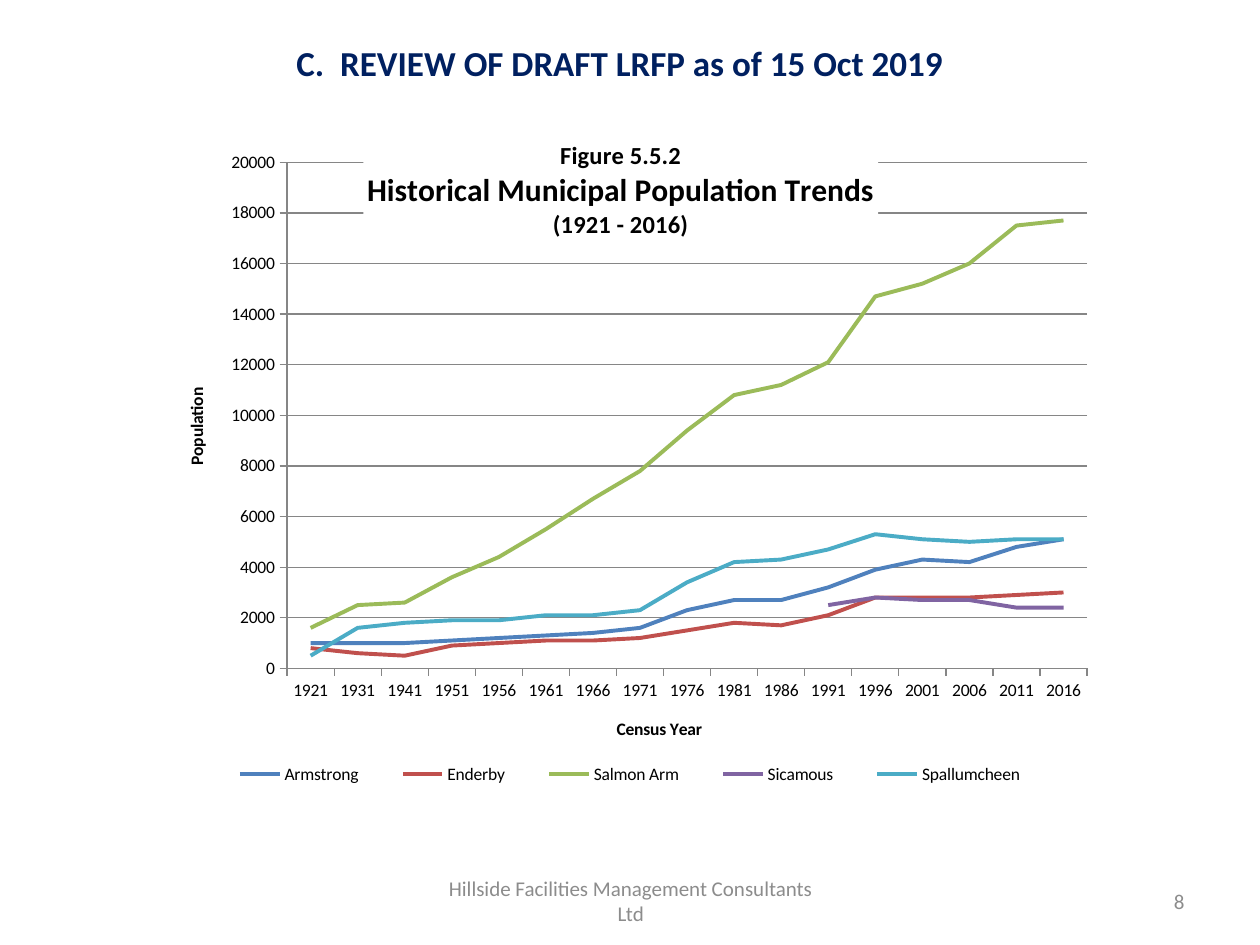
from pptx import Presentation
from pptx.chart.data import CategoryChartData
from pptx.dml.color import RGBColor
from pptx.enum.chart import XL_CHART_TYPE, XL_LEGEND_POSITION, XL_TICK_MARK
from pptx.enum.text import MSO_ANCHOR, PP_ALIGN
from pptx.oxml import parse_xml
from pptx.oxml.ns import nsdecls
from pptx.util import Cm, Pt

HUES = {
    "navy": "002060", "grey": "8C8C8C", "axis": "868686", "black": "000000",
    "white": "FFFFFF",
    "Armstrong": "4F81BD", "Enderby": "C0504D", "Salmon Arm": "9BBB59",
    "Sicamous": "8064A2", "Spallumcheen": "4BACC6",
}
# Ten-year census up to 1951, five-year census after it
YEARS = [*range(1921, 1951, 10), *range(1951, 2017, 5)]
TOWNS = {
    "Armstrong": [1000, 1000, 1000, 1100, 1200, 1300, 1400, 1600, 2300,
                  2700, 2700, 3200, 3900, 4300, 4200, 4800, 5100],
    "Enderby": [800, 600, 500, 900, 1000, 1100, 1100, 1200, 1500,
                1800, 1700, 2100, 2800, 2800, 2800, 2900, 3000],
    "Salmon Arm": [1600, 2500, 2600, 3600, 4400, 5500, 6700, 7800, 9400,
                   10800, 11200, 12100, 14700, 15200, 16000, 17500, 17700],
    "Sicamous": [None] * 11 + [2500, 2800, 2700, 2700, 2400, 2400],
    "Spallumcheen": [500, 1600, 1800, 1900, 1900, 2100, 2100, 2300, 3400,
                     4200, 4300, 4700, 5300, 5100, 5000, 5100, 5100],
}
HEADS = [("Figure 5.5.2", 14), ("Historical Municipal Population Trends", 18),
         ("(1921 - 2016)", 14)]


class Page:
    """Holds the style and the current slide."""

    face = "Calibri"

    def __init__(self, slide):
        self.slide = slide

    def style(self, font, size, hue="black", bold=False):
        font.name, font.size, font.bold = self.face, Pt(size), bold
        font.color.rgb = RGBColor.from_string(HUES[hue])

    def stroke(self, line, hue, width):
        line.color.rgb = RGBColor.from_string(HUES[hue])
        line.width = Pt(width)

    def text(self, words, box, size, hue, align, bold=False):
        frame = self.slide.shapes.add_textbox(*map(Cm, box)).text_frame
        frame.word_wrap = True
        frame.vertical_anchor = MSO_ANCHOR.MIDDLE
        para = frame.paragraphs[0]
        para.text, para.alignment = words, align
        self.style(para.font, size, hue, bold)

    def place(self, node, index, box, inner=False):
        """Give a chart part a fixed place, in shares of the chart."""
        for old in node.xpath("c:layout"):
            node.remove(old)
        target = '<c:layoutTarget val="inner"/>' if inner else ""
        modes = "".join(f'<c:{k}Mode val="edge"/>' for k in "xy")
        sizes = "".join(f'<c:{k} val="{v}"/>' for k, v in zip("xywh", box))
        node.insert(index, parse_xml(
            f'<c:layout {nsdecls("c")}><c:manualLayout>{target}{modes}{sizes}'
            '</c:manualLayout></c:layout>'))

    def axis(self, axis, title):
        axis.major_tick_mark = XL_TICK_MARK.OUTSIDE
        axis.minor_tick_mark = XL_TICK_MARK.NONE
        self.stroke(axis.format.line, "axis", 0.75)
        self.style(axis.tick_labels.font, 10)
        para = axis.axis_title.text_frame.paragraphs[0]
        para.text = title
        self.style(para.font, 10, bold=True)

    def heading(self, title, lines):
        frame = title.text_frame
        for i, (words, size) in enumerate(lines):
            para = frame.add_paragraph() if i else frame.paragraphs[0]
            para.text = words
            self.style(para.font, size, bold=True)
        # A white ground keeps the gridlines from crossing the words
        fill = title.format.fill
        fill.solid()
        fill.fore_color.rgb = RGBColor.from_string(HUES["white"])
        title._element.xpath("c:overlay")[0].set("val", "1")
        self.place(title._element, 1, (0.22, 0))

    def chart(self, box):
        data = CategoryChartData()
        data.categories = [str(year) for year in YEARS]
        for town, counts in TOWNS.items():
            data.add_series(town, counts)
        chart = self.slide.shapes.add_chart(
            XL_CHART_TYPE.LINE, *map(Cm, box), data).chart
        self.style(chart.font, 10)
        self.heading(chart.chart_title, HEADS)

        # Axes and grid
        self.axis(chart.category_axis, "Census Year")
        axis = chart.value_axis
        self.axis(axis, "Population")
        axis.minimum_scale, axis.maximum_scale = 0, 20000
        axis.major_unit = 2000
        self.stroke(axis.major_gridlines.format.line, "axis", 0.75)

        # Lines
        plot = chart.plots[0]
        plot.vary_by_categories = False
        for line in plot.series:
            line.smooth = False
            self.stroke(line.format.line, line.name, 2.25)

        # Legend and plot area
        chart.has_legend = True
        legend = chart.legend
        legend.position = XL_LEGEND_POSITION.BOTTOM
        legend.include_in_layout = False
        self.style(legend.font, 10)
        self.place(legend._element, 1, (0.05, 0.9, 0.9, 0.07))
        self.place(chart._chartSpace.chart.plotArea, 0,
                   (0.14, 0.04, 0.84, 0.74), inner=True)


def main():
    deck = Presentation()
    deck.slide_width, deck.slide_height = Cm(25.4), Cm(19.05)
    page = Page(deck.slides.add_slide(deck.slide_layouts[6]))

    # Title
    page.text("C.  REVIEW OF DRAFT LRFP as of 15 Oct 2019",
              (2.1, 0.6, 20.8, 1.32), 20, "navy", PP_ALIGN.CENTER, True)
    # Population chart
    page.chart((3.1, 2.72, 19.2, 13.79))
    # Footer and page number
    page.text("Hillside Facilities Management Consultants Ltd",
              (8.69, 17.65, 8.05, 1.02), 12, "grey", PP_ALIGN.CENTER)
    page.text("8", (18.21, 17.65, 5.92, 1.02), 12, "grey", PP_ALIGN.RIGHT)

    deck.save("out.pptx")


if __name__ == "__main__":
    main()
